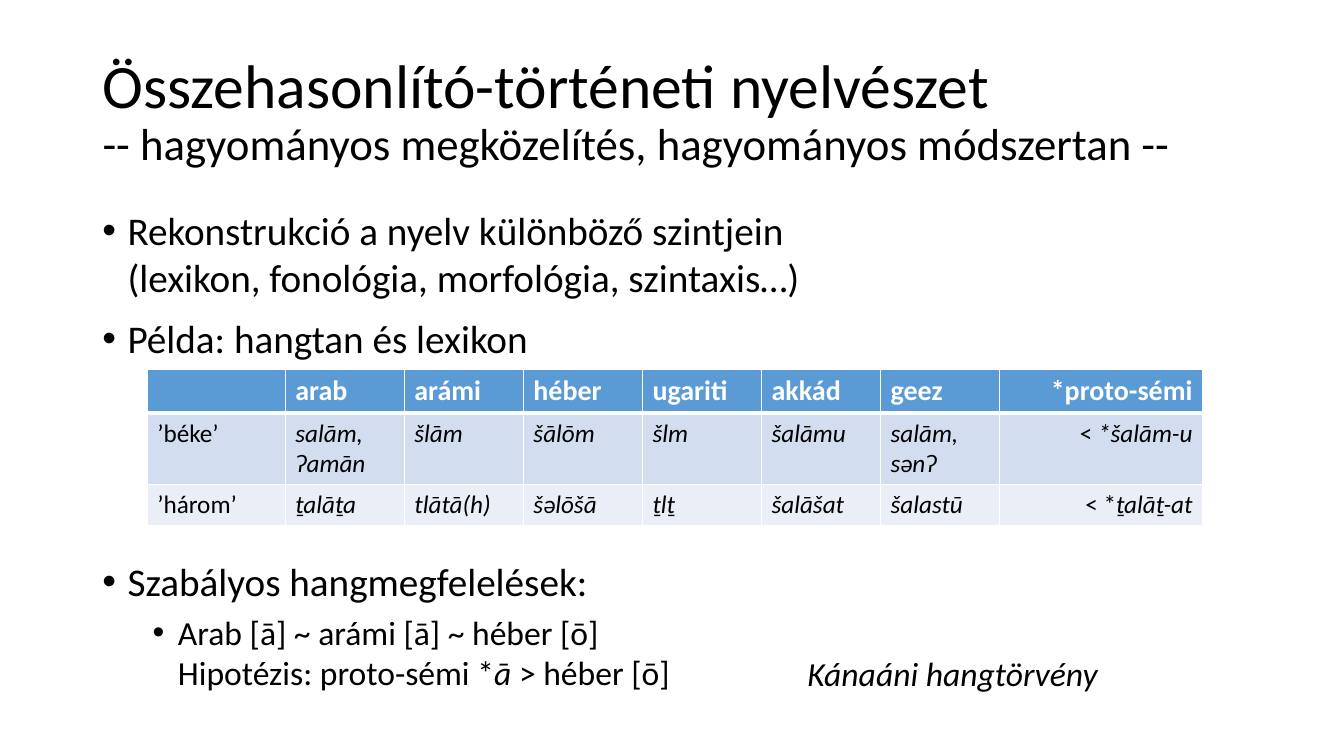
from lxml import etree
from pptx import Presentation
from pptx.dml.color import RGBColor
from pptx.enum.text import MSO_ANCHOR, PP_ALIGN
from pptx.oxml.ns import qn
from pptx.util import Cm, Pt

LEFT, RIGHT = PP_ALIGN.LEFT, PP_ALIGN.RIGHT
MIDDLE = MSO_ANCHOR.MIDDLE
FONT = "Calibri"
BLACK, WHITE = "000000", "FFFFFF"
ROW_FILLS = ["5B9BD5", "D2DEEF", "EAEFF7"]
ROW_HEIGHTS = [1.11, 1.8, 1.03]
COL_WIDTHS = [3.48] + [3] * 6 + [5.12]
WORDS = [
    ["", "arab", "arámi", "héber", "ugariti", "akkád", "geez", "*proto-sémi"],
    ["’béke’", "|salām, ʔamān", "|šlām", "|šālōm", "|šlm", "|šalāmu",
     "|salām, sənʔ", "< |*šalām-u"],
    ["’három’", "|ṯalāṯa", "|tlātā(h)", "|šəlōšā", "|ṯlṯ", "|šalāšat",
     "|šalastū", "< *|ṯalāṯ-at"],
]


def rgb(value):
    """Turn a hex string into a colour."""
    return RGBColor.from_string(value)


def style_run(r, size, color=BLACK, bold=False, italic=False):
    """Set the font of one run."""
    r.font.name, r.font.size = FONT, Pt(size)
    r.font.bold, r.font.italic = bold, italic
    r.font.color.rgb = rgb(color)


def add_runs(p, text, size, color=BLACK, bold=False):
    """Add text in which each | switches italics and each \\v breaks the line."""
    for i, part in enumerate(text.split("|")):
        for j, line in enumerate(part.split("\v")):
            if j:
                p.add_line_break()
            if line:
                r = p.add_run()
                r.text = line
                style_run(r, size, color, bold, italic=i % 2 == 1)


def set_bullet(p, level):
    """Give a paragraph a hanging round bullet."""
    pPr = p._p.get_or_add_pPr()
    pPr.set("marL", str(Cm(0.635 + 1.27 * level)))
    pPr.set("indent", str(Cm(-0.635)))
    etree.SubElement(pPr, qn("a:buFont")).set("typeface", "Arial")
    etree.SubElement(pPr, qn("a:buChar")).set("char", "•")


def set_title(s, title, subtitle):
    """Place and format the two-line title."""
    sp = s.shapes.title
    sp.left, sp.top, sp.width, sp.height = Cm(2.33), Cm(1.01), Cm(29.21), Cm(3.68)
    tf = sp.text_frame
    tf.vertical_anchor, tf.word_wrap = MIDDLE, True
    p = tf.paragraphs[0]
    p.text = f"{title}\v{subtitle}"
    p.alignment, p.line_spacing = LEFT, 0.9
    for r, size in zip(p.runs, (44, 32)):
        style_run(r, size)


def add_text(s, left, top, width, height, items):
    """Add a text box of (text, level) items, with no bullet at level None."""
    tf = s.shapes.add_textbox(Cm(left), Cm(top), Cm(width), Cm(height)).text_frame
    tf.word_wrap = True
    for i, (text, level) in enumerate(items):
        p = tf.add_paragraph() if i else tf.paragraphs[0]
        if i:
            p.space_before = Pt(5 if level else 10)
        if level is not None:
            set_bullet(p, level)
        add_runs(p, text, 28 if level == 0 else 24)


def set_borders(cell, bottom):
    """Draw white borders around a cell."""
    tcPr = cell._tc.get_or_add_tcPr()
    for side, width in (("L", 1), ("R", 1), ("T", 1), ("B", bottom)):
        ln = etree.SubElement(tcPr, qn(f"a:ln{side}"), w=str(Pt(width)))
        fill = etree.SubElement(ln, qn("a:solidFill"))
        etree.SubElement(fill, qn("a:srgbClr"), val=WHITE)


def add_word_table(s, left, top):
    """Add the table of cognate words."""
    table = s.shapes.add_table(len(WORDS), len(COL_WIDTHS), Cm(left), Cm(top),
                               Cm(sum(COL_WIDTHS)), Cm(sum(ROW_HEIGHTS))).table
    for col, width in zip(table.columns, COL_WIDTHS):
        col.width = Cm(width)
    for i, words in enumerate(WORDS):
        header = i == 0
        table.rows[i].height = Cm(ROW_HEIGHTS[i])
        for j, word in enumerate(words):
            cell = table.cell(i, j)
            set_borders(cell, 3 if header else 1)
            cell.fill.solid()
            cell.fill.fore_color.rgb = rgb(ROW_FILLS[i])
            p = cell.text_frame.paragraphs[0]
            p.alignment = RIGHT if j == len(words) - 1 else LEFT
            add_runs(p, word, 20 if header else 18, WHITE if header else BLACK, header)


def main():
    """Build and save the slide."""
    prs = Presentation()
    prs.slide_width, prs.slide_height = Cm(33.87), Cm(19.05)
    s = prs.slides.add_slide(prs.slide_layouts[5])
    set_title(s, "Összehasonlító-történeti nyelvészet",
              "-- hagyományos megközelítés, hagyományos módszertan --")
    add_text(s, 2.33, 5.08, 29.87, 4.2, [
        ("Rekonstrukció a nyelv különböző szintjein"
         "\v(lexikon, fonológia, morfológia, szintaxis…)", 0),
        ("Példa: hangtan és lexikon", 0),
    ])
    add_word_table(s, 3.71, 9.3)
    add_text(s, 2.33, 13.92, 17, 4, [
        ("Szabályos hangmegfelelések:", 0),
        ("Arab [ā] ~ arámi [ā] ~ héber [ō]"
         "\vHipotézis: proto-sémi *|ā| > héber [ō]", 1),
    ])
    add_text(s, 20.1, 16.34, 9, 1.3, [("|Kánaáni hangtörvény", None)])
    prs.save("out.pptx")


if __name__ == "__main__":
    main()
